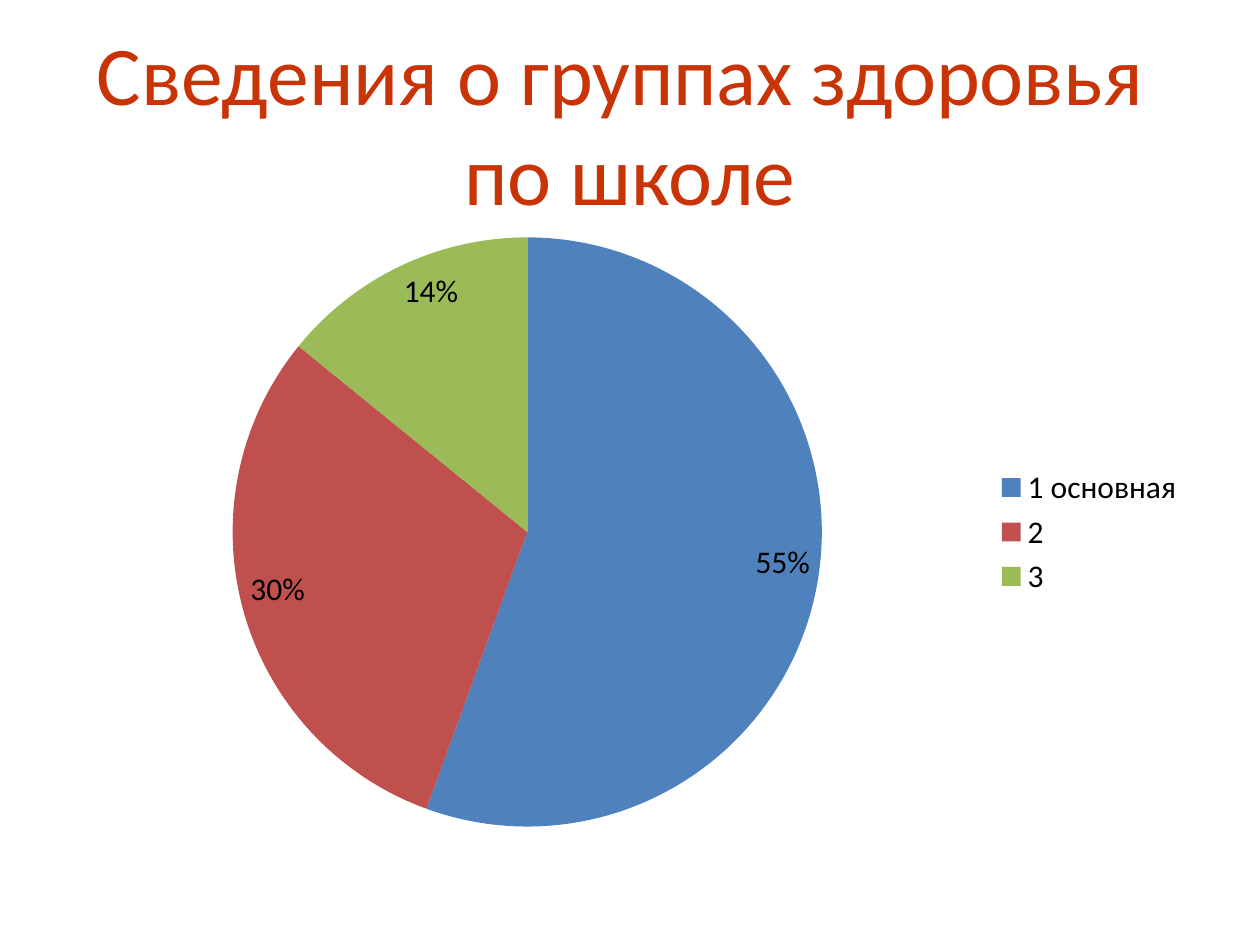
import pptx
import pptx.chart.data
import pptx.dml.color
import pptx.enum.chart
import pptx.enum.text
import pptx.util

SCALE = 914400 // 126
TITLE_RED = pptx.dml.color.RGBColor(0xC8, 0x34, 0x06)
BLACK = pptx.dml.color.RGBColor(0x00, 0x00, 0x00)
BLUE = pptx.dml.color.RGBColor(0x4F, 0x81, 0xBD)
RED = pptx.dml.color.RGBColor(0xC0, 0x50, 0x4D)
GREEN = pptx.dml.color.RGBColor(0x9B, 0xBB, 0x59)
FONT = "Calibri"
GROUPS = [("1 основная", 0.55, BLUE), ("2", 0.3, RED), ("3", 0.14, GREEN)]


def px(length):
    """Turn whole pixels into EMU."""
    return pptx.util.Emu(length * SCALE)


def set_font(font, size, color):
    """Apply the slide typeface with a size and colour."""
    font.name = FONT
    font.size = pptx.util.Pt(size)
    font.color.rgb = color


def add_title(page, text):
    """Fill and place the title placeholder."""
    box = page.shapes.title
    box.left, box.top, box.width, box.height = px(63), px(38), px(1134), px(157)
    frame = box.text_frame
    frame.text = text
    frame.word_wrap = True
    frame.auto_size = pptx.enum.text.MSO_AUTO_SIZE.NONE
    frame.vertical_anchor = pptx.enum.text.MSO_ANCHOR.MIDDLE
    frame.margin_top = px(17)
    para = frame.paragraphs[0]
    para.alignment = pptx.enum.text.PP_ALIGN.CENTER
    set_font(para.font, 47.7, TITLE_RED)


def add_health_pie(page, groups):
    """Add the pie of health groups with percent labels and a legend."""
    names, shares, colors = zip(*groups)
    data = pptx.chart.data.CategoryChartData(number_format="0%")
    data.categories = names
    data.add_series("Series 1", shares)
    chart = page.shapes.add_chart(
        pptx.enum.chart.XL_CHART_TYPE.PIE,
        px(63), px(220), px(1134), px(624), data,
    ).chart
    set_font(chart.font, 18, BLACK)
    chart.has_title = False
    chart.has_legend = True
    chart.legend.position = pptx.enum.chart.XL_LEGEND_POSITION.RIGHT
    chart.legend.include_in_layout = False
    plot = chart.plots[0]
    plot.vary_by_categories = True
    for index, color in enumerate(colors):
        fill = plot.series[0].points[index].format.fill
        fill.solid()
        fill.fore_color.rgb = color
    plot.has_data_labels = True
    labels = plot.data_labels
    labels.show_value = True
    labels.show_percentage = False
    labels.number_format = "0%"
    labels.number_format_is_linked = False
    labels.position = pptx.enum.chart.XL_LABEL_POSITION.INSIDE_END
    set_font(labels.font, 18, BLACK)


def main():
    """Build and save the slide."""
    deck = pptx.Presentation()
    deck.slide_width = pptx.util.Inches(10)
    deck.slide_height = pptx.util.Inches(7.5)
    page = deck.slides.add_slide(deck.slide_layouts[5])
    add_title(page, "Сведения о группах здоровья \vпо школе")
    add_health_pie(page, GROUPS)
    deck.save("out.pptx")


if __name__ == "__main__":
    main()
